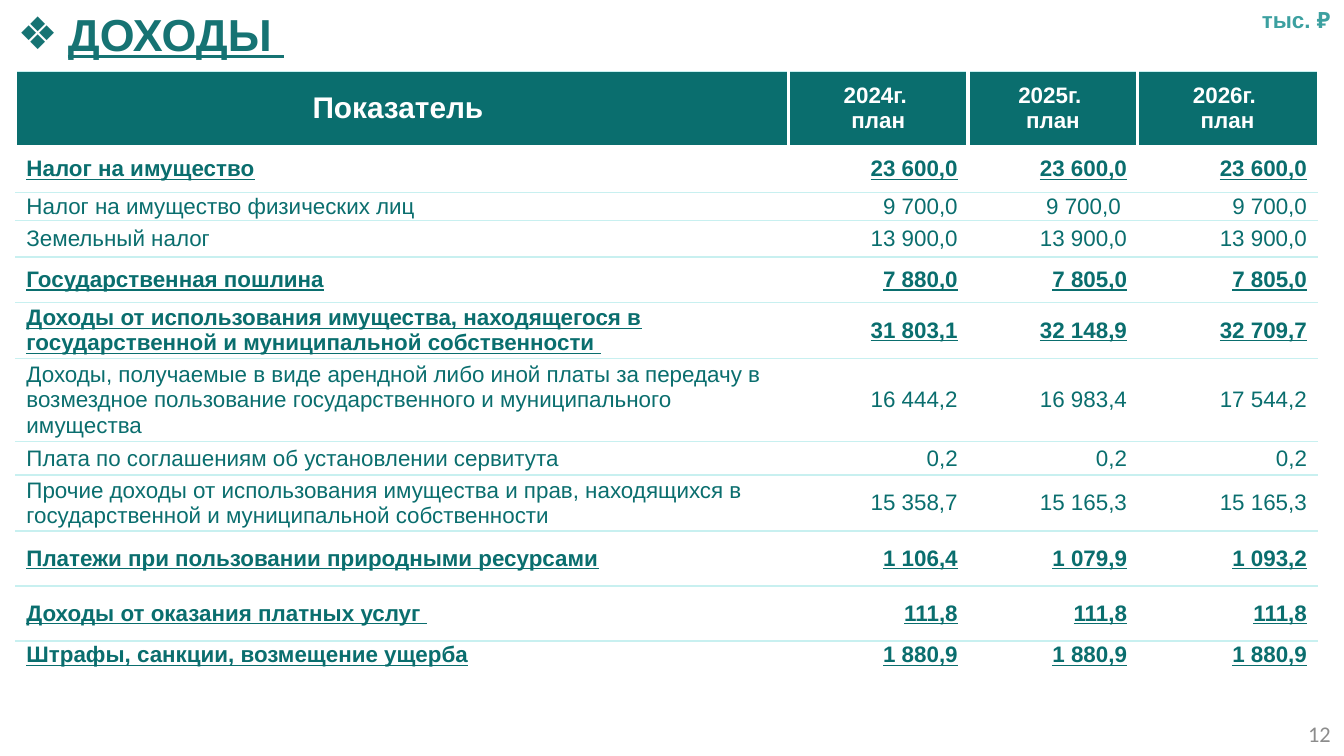
"""Build the slide with the table of budget income for 2024 to 2026."""
from lxml import etree
from pptx import Presentation
from pptx.dml.color import RGBColor
from pptx.enum.text import MSO_ANCHOR, MSO_AUTO_SIZE, PP_ALIGN
from pptx.oxml.ns import qn
from pptx.util import Cm, Pt

LEFT, MID, RIGHT = PP_ALIGN.LEFT, PP_ALIGN.CENTER, PP_ALIGN.RIGHT
TOP, CENTRE = MSO_ANCHOR.TOP, MSO_ANCHOR.MIDDLE
FIXED = MSO_AUTO_SIZE.NONE
TEAL = RGBColor(0x0A, 0x6E, 0x6E)
HEAD = RGBColor(0x16, 0x73, 0x73)
UNIT = RGBColor(0x3C, 0xA0, 0xA0)
GREY = RGBColor(0x8C, 0x8C, 0x8C)
PALE = RGBColor(0xC8, 0xF0, 0xF0)
WHITE = RGBColor(0xFF, 0xFF, 0xFF)

YEARS = ["2024г. \nплан", "2025г. \nплан", "2026г. \nплан"]
ROWS = [
    (0.89, True, "Налог на имущество", "23 600,0", "23 600,0", "23 600,0"),
    (0.53, False, "Налог на имущество физических лиц", "9 700,0", "9 700,0 ", "9 700,0"),
    (0.69, False, "Земельный налог", "13 900,0", "13 900,0", "13 900,0"),
    (0.86, True, "Государственная пошлина", "7 880,0", "7 805,0", "7 805,0"),
    (1.06, True, "Доходы от использования имущества, находящегося в "
     "государственной и муниципальной собственности ", "31 803,1", "32 148,9", "32 709,7"),
    (1.57, False, "Доходы, получаемые в виде арендной либо иной платы за передачу в "
     "возмездное пользование государственного и муниципального имущества",
     "16 444,2", "16 983,4", "17 544,2"),
    (0.63, False, "Плата по соглашениям об установлении сервитута", "0,2", "0,2", "0,2"),
    (1.06, False, "Прочие доходы от использования имущества и прав, находящихся в "
     "государственной и муниципальной собственности", "15 358,7", "15 165,3", "15 165,3"),
    (1.04, True, "Платежи при пользовании природными ресурсами",
     "1 106,4", "1 079,9", "1 093,2"),
    (1.04, True, "Доходы от оказания платных услуг ", "111,8", "111,8", "111,8"),
    (0.53, True, "Штрафы, санкции, возмещение ущерба", "1 880,9", "1 880,9", "1 880,9"),
]


def write(frame, text, size=12, face="Arial", color=TEAL, bold=False,
          line=False, align=LEFT, indent=0, hang=0, bullet=None):
    for i, part in enumerate(text.split("\n")):
        para = frame.paragraphs[0] if i == 0 else frame.add_paragraph()
        para.alignment = align
        props = para._p.get_or_add_pPr()
        if indent:
            props.set("marL", str(Cm(indent)))
            props.set("indent", str(-Cm(hang)))
        if bullet:
            etree.SubElement(props, qn("a:buFont"), typeface=face)
            etree.SubElement(props, qn("a:buChar"), char=bullet)
        run = para.add_run()
        run.text = part
        font = run.font
        font.size, font.name = Pt(size), face
        font.bold, font.underline = bold, line
        font.color.rgb = color


def border(cell, side, color, width):
    props = cell._tc.get_or_add_tcPr()
    edge = etree.SubElement(props, qn("a:ln" + side), w=str(Pt(width)))
    fill = etree.SubElement(edge, qn("a:solidFill"))
    etree.SubElement(fill, qn("a:srgbClr"), val=str(color))


deck = Presentation()
deck.slide_width, deck.slide_height = Cm(25.4), Cm(14.29)
slide = deck.slides.add_slide(deck.slide_layouts[5])

title = slide.shapes.title
title.left, title.top, title.width, title.height = Cm(0.08), Cm(0), Cm(6.02), Cm(1.28)
frame = title.text_frame
frame.auto_size = FIXED
frame.vertical_anchor = TOP
write(frame, "ДОХОДЫ ", size=24, color=HEAD, bold=True, line=True,
      indent=0.95, hang=0.95, bullet="❖")

page = slide.shapes.add_textbox(Cm(19.48), Cm(13.49), Cm(5.92), Cm(0.76)).text_frame
page.word_wrap = True
page.vertical_anchor = CENTRE
write(page, "12", face="Calibri", color=GREY, align=RIGHT)

unit = slide.shapes.add_textbox(Cm(23.6), Cm(0), Cm(1.8), Cm(0.76)).text_frame
unit.word_wrap = False
write(unit, "тыс. ₽", color=UNIT, bold=True)

table = slide.shapes.add_table(len(ROWS) + 1, 4, Cm(0.3), Cm(1.35),
                               Cm(24.6), Cm(11.3)).table
table.first_row = table.horz_banding = False
for col, width in zip(table.columns, [14.6, 3.4, 3.2, 3.4]):
    col.width = Cm(width)

table.rows[0].height = Cm(1.4)
for c, text in enumerate(["Показатель "] + YEARS):
    cell = table.cell(0, c)
    cell.vertical_anchor = CENTRE
    if c:
        cell.margin_left = cell.margin_right = Cm(0)
        border(cell, "L", WHITE, 2.25)
    if c < 3:
        border(cell, "R", WHITE, 2.25)
    border(cell, "T", PALE, 1)
    cell.fill.solid()
    cell.fill.fore_color.rgb = TEAL
    write(cell.text_frame, text, size=12 if c else 16, color=WHITE, bold=True, align=MID)

for r, (height, main, *texts) in enumerate(ROWS, 1):
    table.rows[r].height = Cm(height)
    for c, text in enumerate(texts):
        cell = table.cell(r, c)
        cell.vertical_anchor = CENTRE
        cell.margin_top = cell.margin_bottom = Cm(0)
        cell.margin_left = Cm(0) if c else Cm(0.1)
        cell.margin_right = Cm(0.2) if c else Cm(0)
        if r > 1:
            border(cell, "T", PALE, 1)
        if r < len(ROWS):
            border(cell, "B", PALE, 1)
        cell.fill.background()
        write(cell.text_frame, text, bold=main, line=main,
              align=RIGHT if c else LEFT, indent=0 if c else 0.1)

deck.save("out.pptx")
